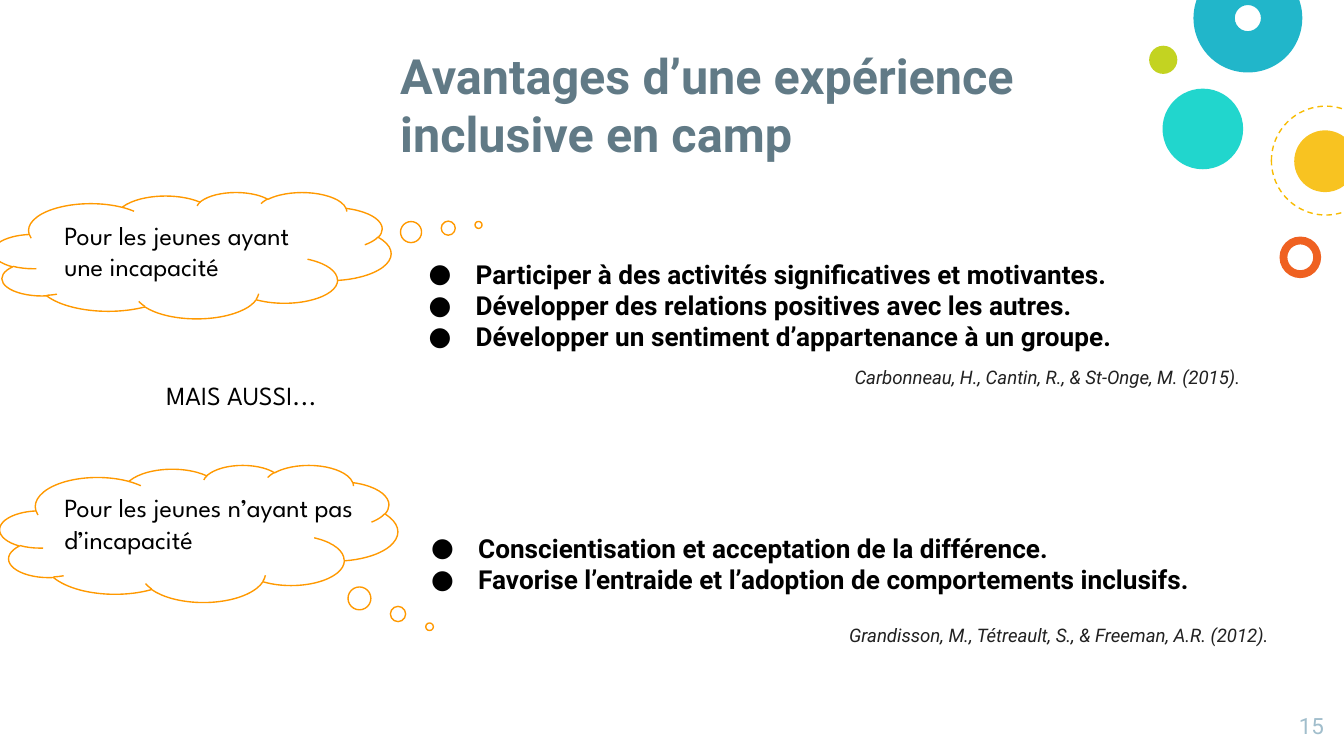
import pptx
import pptx.util
import pptx.dml.color
import pptx.enum.dml
import pptx.enum.shapes
import pptx.enum.text
import pptx.oxml
import pptx.oxml.ns

Inches = pptx.util.Inches
Pt = pptx.util.Pt
RGBColor = pptx.dml.color.RGBColor
Kind = pptx.enum.shapes.MSO_SHAPE
Align = pptx.enum.text.PP_ALIGN
Anchor = pptx.enum.text.MSO_ANCHOR

BLACK = RGBColor(0, 0, 0)
SLATE = RGBColor(0x61, 0x7A, 0x86)
MIST = RGBColor(0xA1, 0xBE, 0xCC)
INK = RGBColor(0x21, 0x21, 0x21)
AMBER = RGBColor(0xFF, 0x99, 0x00)
TEAL = RGBColor(0x00, 0xD1, 0xC6)
RED = RGBColor(0xED, 0x4A, 0x00)
GOLD = RGBColor(0xF8, 0xBB, 0x00)
BLUE = RGBColor(0x00, 0xAC, 0xC3)
LIME = RGBColor(0xBB, 0xCD, 0x00)

HEAD = {"name": "Roboto", "size": Pt(26), "bold": True}
POINT = {"name": "Roboto", "size": Pt(14), "bold": True}
CITE = {"name": "Roboto", "size": Pt(10), "italic": True}
PAGE = {"name": "Roboto", "size": Pt(12)}
LABEL = {"name": "League Spartan", "size": Pt(14)}
INSETS = dict.fromkeys(
    ("margin_left", "margin_top", "margin_right", "margin_bottom"), Inches(0.1))


def apply(item, form):
    for key, value in form.items():
        setattr(item, key, value)


def make_node(tag, attrs):
    return pptx.oxml.parse_xml(
        f"<a:{tag} {pptx.oxml.ns.nsdecls('a')} {attrs}/>")


def add_text(slide, box, lines, font, color, align=Align.LEFT, anchor=Anchor.TOP):
    frame = slide.shapes.add_textbox(*map(Inches, box)).text_frame
    apply(frame, {**INSETS, "word_wrap": True, "vertical_anchor": anchor})
    for place, line in enumerate(lines):
        para = frame.add_paragraph() if place else frame.paragraphs[0]
        para.alignment = align
        run = para.add_run()
        run.text = line
        apply(run.font, font)
        run.font.color.rgb = color
    return frame


def add_form(slide, kind, box, adjust=()):
    shape = slide.shapes.add_shape(kind, *map(Inches, box))
    shape.shadow.inherit = False
    for place, value in enumerate(adjust):
        shape.adjustments[place] = value
    return shape


def outline(shape, color):
    shape.fill.background()
    shape.line.color.rgb = color
    shape.line.width = Pt(0.75)


def add_discs(slide, box):
    left, top = box[:2]
    discs = (
        (0.1, 0.93, 0.6, TEAL, None),
        (0.97, 2.03, 0.31, RED, 0.19),
        (1.08, 1.24, 0.46, GOLD, None),
        (0.33, 0, 0.81, BLUE, 0.38),
        (0, 0.61, 0.21, LIME, None),
    )
    for x, y, size, color, hole in discs:
        kind, adjust = (Kind.DONUT, (hole,)) if hole else (Kind.OVAL, ())
        disc = add_form(slide, kind, (left + x, top + y, size, size), adjust)
        disc.fill.solid()
        disc.fill.fore_color.rgb = color
        disc.line.fill.background()
        tint = disc.fill._xPr.find(".//" + pptx.oxml.ns.qn("a:srgbClr"))
        tint.append(make_node("alpha", "val='87000'"))
    ring = add_form(slide, Kind.OVAL, (left + 0.91, top + 1.06, 0.81, 0.81))
    outline(ring, GOLD)
    ring.line.dash_style = pptx.enum.dml.MSO_LINE.DASH


def add_points(slide, box, lines):
    frame = add_text(slide, box, lines, POINT, BLACK)
    for para in frame.paragraphs:
        props = para._p.get_or_add_pPr()
        props.set("marL", str(Inches(0.5)))
        props.set("indent", str(Inches(-0.35)))
        props.append(make_node("buFont", "typeface='Roboto'"))
        props.append(make_node("buChar", "char='●'"))


def add_thought(slide, box, tail, words, inset):
    left, top = box[:2]
    x, y, wide, high = inset
    cloud = add_form(slide, Kind.CLOUD_CALLOUT, box, tail)
    outline(cloud, AMBER)
    add_text(slide, (left + x, top + y, wide, high), [words], LABEL, BLACK)


def build():
    deck = pptx.Presentation()
    wide = Inches(10)
    apply(deck, {"slide_width": wide, "slide_height": wide * 9 // 16})
    slide = deck.slides.add_slide(deck.slide_layouts[6])
    add_discs(slide, (8.55, -0.27, 1.72, 2.34))
    add_text(slide, (2.88, 0.26, 5.77, 1.05),
             ["Avantages d’une expérience inclusive en camp"],
             HEAD, SLATE, anchor=Anchor.BOTTOM)
    add_text(slide, (9.44, 5.2, 0.51, 0.43), ["15"], PAGE, MIST, Align.RIGHT)
    add_points(slide, (2.94, 1.82, 6.45, 1.29), [
        "Participer à des activités significatives et motivantes.",
        "Développer des relations positives avec les autres.",
        "Développer un sentiment d’appartenance à un groupe.",
    ])
    add_text(slide, (6.26, 2.64, 3.52, 0.38),
             ["Carbonneau, H., Cantin, R., & St-Onge, M. (2015)."], CITE, INK)
    add_points(slide, (2.96, 3.86, 6.13, 0.74), [
        "Conscientisation et acceptation de la différence.",
        "Favorise l’entraide et l’adoption de comportements inclusifs.",
    ])
    add_text(slide, (6.22, 4.56, 3.76, 0.38),
             ["Grandisson, M., Tétreault, S., & Freeman, A.R. (2012)."], CITE, INK)
    add_thought(slide, (-0.05, 1.43, 2.96, 0.94), (0.72, -0.24),
                "Pour les jeunes ayant une incapacité", (0.43, 0.1, 2.19, 0.74))
    add_text(slide, (1.14, 2.72, 1.77, 0.48), ["MAIS AUSSI..."], LABEL, BLACK)
    add_thought(slide, (0, 3.46, 2.96, 1.02), (0.58, 0.68),
                "Pour les jeunes n’ayant pas d’incapacité", (0.38, 0.1, 2.48, 0.67))
    deck.save("out.pptx")


if __name__ == "__main__":
    build()
